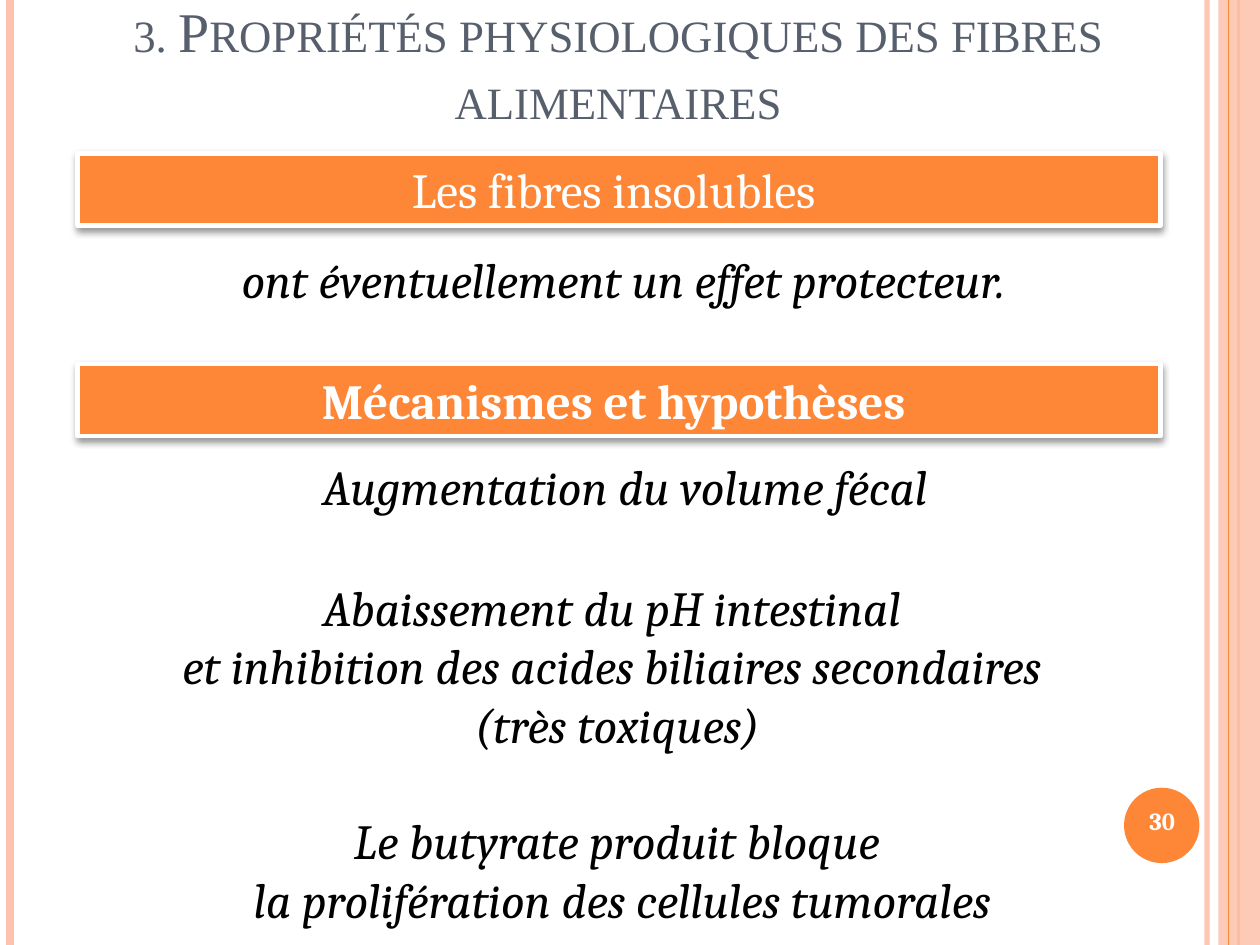
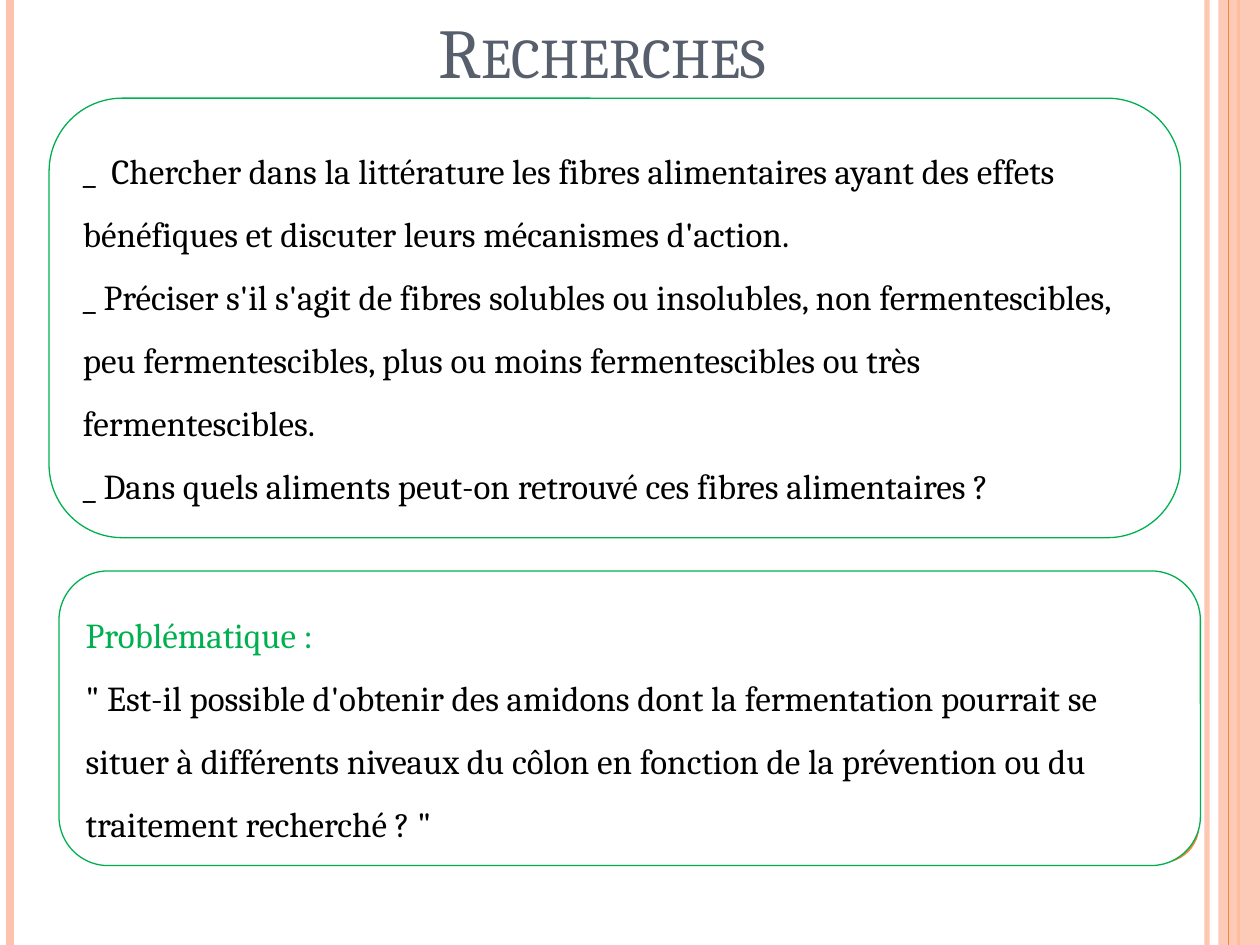
import lxml.etree
import pptx
import pptx.dml.color
import pptx.enum.shapes
import pptx.enum.text
import pptx.oxml.ns
import pptx.util

Cm = pptx.util.Cm
Pt = pptx.util.Pt
SHAPE = pptx.enum.shapes.MSO_SHAPE
ALIGN = pptx.enum.text.PP_ALIGN
ANCHOR = pptx.enum.text.MSO_ANCHOR
qn = pptx.oxml.ns.qn

ORANGE, PEACH, SLATE, GREEN = "FE8637", "FEC3AE", "575F6D", "00B050"
WHITE, BLACK = "FFFFFF", "000000"
FONT, TITLE_FONT = "Cambria", "Times New Roman"
WIDTH, HEIGHT = 25.4, 19.05


def rgb(color):
    return pptx.dml.color.RGBColor.from_string(color)


def set_alpha(sp, percent):
    for color in sp._element.spPr.iter(qn("a:srgbClr")):
        lxml.etree.SubElement(color, qn("a:alpha"), val=str(percent * 1000))


class Deck:
    """Hold the shared style and the current slide."""

    def __init__(self):
        self.prs = pptx.Presentation()
        self.prs.slide_width, self.prs.slide_height = Cm(WIDTH), Cm(HEIGHT)
        self.s = None

    def new_slide(self):
        self.s = self.prs.slides.add_slide(self.prs.slide_layouts[6])
        self.rule(24.33, PEACH, 3, 93)
        self.rule(0.21, PEACH, 4.5)
        self.rule(24.97, ORANGE, 1.5)
        set_alpha(self.shape(SHAPE.RECTANGLE, (24.56, 0, 0.84, HEIGHT), PEACH), 87)
        self.rule(24.77, ORANGE, 0.75)
        self.shape(SHAPE.OVAL, (22.66, 15.88, 1.52, 1.52), ORANGE)

    def rule(self, x, color, width, alpha=None):
        line = self.s.shapes.add_connector(
            pptx.enum.shapes.MSO_CONNECTOR.STRAIGHT, Cm(x), Cm(0), Cm(x), Cm(HEIGHT))
        line.line.color.rgb = rgb(color)
        line.line.width = Pt(width)
        lxml.etree.SubElement(line._element.spPr, qn("a:effectLst"))
        if alpha:
            set_alpha(line, alpha)

    def shape(self, kind, box, fill, line=None, width=0.75):
        sp = self.s.shapes.add_shape(kind, *map(Cm, box))
        sp.shadow.inherit = False
        sp.fill.solid()
        sp.fill.fore_color.rgb = rgb(fill)
        if line:
            sp.line.color.rgb = rgb(line)
            sp.line.width = Pt(width)
        else:
            sp.line.fill.background()
        return sp

    def fill_text(self, sp, lines, size, color=BLACK, font=FONT, align=ALIGN.CENTER,
                  anchor=ANCHOR.TOP, wrap=True, spacing=None, bold=False,
                  italic=False, small_caps=False):
        tf = sp.text_frame
        tf.word_wrap = wrap
        tf.vertical_anchor = anchor
        for i, (text, line_color) in enumerate(lines):
            p = tf.add_paragraph() if i else tf.paragraphs[0]
            p.alignment = align
            p.line_spacing = spacing
            r = p.add_run()
            r.text = text
            r.font.name, r.font.size = font, Pt(size)
            r.font.bold, r.font.italic = bold, italic
            r.font.color.rgb = rgb(line_color or color)
            if small_caps:
                r._r.get_or_add_rPr().set("cap", "small")
        return tf

    def text(self, box, *lines, **style):
        sp = self.s.shapes.add_textbox(*map(Cm, box))
        return self.fill_text(sp, [(line, None) for line in lines], **style)

    def title(self, box, text, size, font=FONT):
        self.text(box, text, size=size, font=font, color=SLATE,
                  anchor=ANCHOR.BOTTOM, small_caps=True)

    def page_number(self, number):
        self.text((22.58, 15.82, 1.7, 1.45), number, size=14, color=WHITE,
                  bold=True, anchor=ANCHOR.MIDDLE)

    def banner(self, top, text, bold=False):
        sp = self.shape(SHAPE.RECTANGLE, (1.57, top, 21.82, 1.45), ORANGE, WHITE, 2.75)
        effects = sp._element.spPr.find(qn("a:effectLst"))
        shadow = lxml.etree.SubElement(
            effects, qn("a:outerShdw"), blurRad=str(Pt(4)), dist=str(Pt(2)),
            dir=str(90 * 60000), rotWithShape="0")
        color = lxml.etree.SubElement(shadow, qn("a:srgbClr"), val=BLACK)
        lxml.etree.SubElement(color, qn("a:alpha"), val="40000")
        self.fill_text(sp, [(text, None)], size=28, color=WHITE, bold=bold)

    def statement(self, box, *lines):
        tf = self.text(box, *lines, size=28, italic=True, wrap=False)
        tf.auto_size = pptx.enum.text.MSO_AUTO_SIZE.SHAPE_TO_FIT_TEXT

    def panel(self, box, *lines):
        sp = self.shape(SHAPE.ROUNDED_RECTANGLE, box, WHITE, GREEN)
        self.fill_text(sp, lines, size=20, align=ALIGN.LEFT, anchor=ANCHOR.MIDDLE,
                       spacing=1.5)


def build_insoluble_fibres(deck):
    deck.new_slide()
    deck.page_number("30")
    deck.banner(3.1, "Les fibres insolubles ")
    deck.statement((3.63, 4.9, 17.88, 1.45), "ont éventuellement un effet protecteur.")
    deck.banner(7.34, "Mécanismes et hypothèses ", bold=True)
    deck.statement((1.98, 11.51, 20.93, 3.84),
                   "Abaissement du pH intestinal ",
                   "et inhibition des acides biliaires secondaires ",
                   "(très toxiques)")
    deck.statement((3.68, 16.21, 17.73, 2.64),
                   "Le butyrate produit bloque ",
                   "la prolifération des cellules tumorales")
    deck.statement((5.36, 9.07, 14.48, 1.45), "Augmentation du volume fécal")
    deck.title((0.99, -0.41, 22.94, 3.18),
               "3. Propriétés physiologiques des fibres alimentaires", 32, TITLE_FONT)


def build_research(deck):
    deck.new_slide()
    deck.title((1.27, -1.19, 21.74, 3.18), "Recherches", 40)
    deck.panel(
        (0.99, 1.98, 22.81, 8.86),
        ("_  Chercher dans la littérature les fibres alimentaires ayant des effets "
         "bénéfiques et discuter leurs mécanismes d'action.", None),
        ("_ Préciser s'il s'agit de fibres solubles ou insolubles, non fermentescibles, "
         "peu fermentescibles, plus ou moins fermentescibles ou très "
         "fermentescibles.", None),
        ("_ Dans quels aliments peut-on retrouvé ces fibres alimentaires ?", None))
    deck.panel(
        (1.19, 11.51, 23.01, 5.94),
        ("Problématique :", GREEN),
        ("\" Est-il possible d'obtenir des amidons dont la fermentation pourrait se "
         "situer à différents niveaux du côlon en fonction de la prévention ou du "
         "traitement recherché ? \"", None))


def main():
    deck = Deck()
    build_insoluble_fibres(deck)
    build_research(deck)
    deck.prs.save("out.pptx")


if __name__ == "__main__":
    main()
